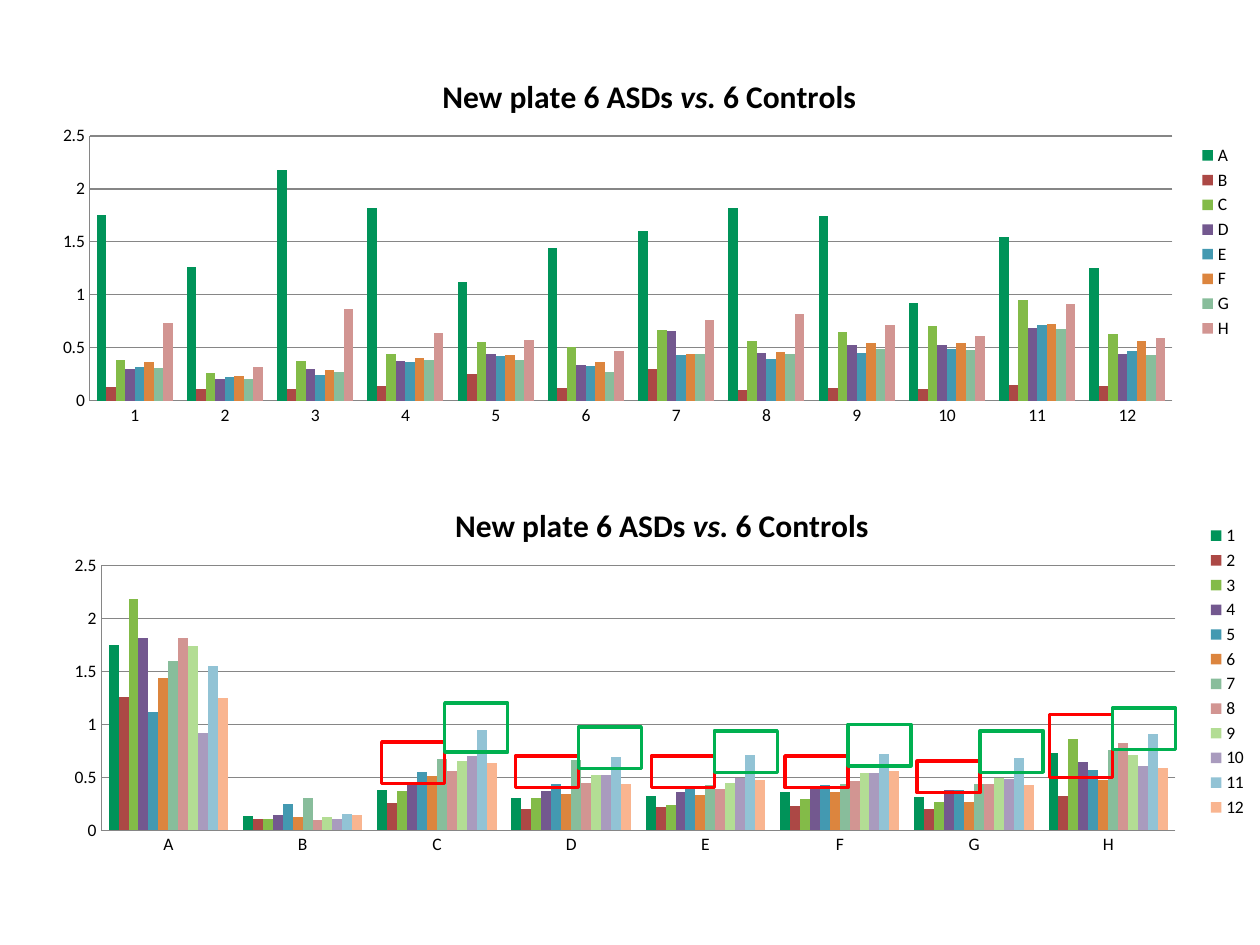
from dataclasses import dataclass

from lxml.etree import SubElement
from pptx import Presentation
from pptx.chart.data import CategoryChartData
from pptx.dml.color import RGBColor
from pptx.enum.chart import XL_CHART_TYPE as ChartType
from pptx.enum.chart import XL_LEGEND_POSITION as LegendPosition
from pptx.enum.chart import XL_TICK_MARK as TickMark
from pptx.enum.shapes import MSO_SHAPE as Preset
from pptx.oxml.ns import qn
from pptx.util import Inches, Pt

TITLE = [("New plate 6 ASDs ", False), ("vs.", True), (" 6 Controls", False)]
SAMPLES = [str(number) for number in range(1, 13)]
PLATE = {  # plate row: one value per sample
    "A": (1.75, 1.26, 2.18, 1.82, 1.12, 1.44, 1.6, 1.82, 1.74, 0.92, 1.55, 1.25),
    "B": (0.13, 0.11, 0.11, 0.14, 0.25, 0.12, 0.3, 0.1, 0.12, 0.11, 0.15, 0.14),
    "C": (0.38, 0.26, 0.37, 0.44, 0.55, 0.51, 0.67, 0.56, 0.65, 0.7, 0.95, 0.63),
    "D": (0.3, 0.2, 0.3, 0.37, 0.44, 0.34, 0.66, 0.45, 0.52, 0.52, 0.69, 0.44),
    "E": (0.32, 0.22, 0.24, 0.36, 0.42, 0.33, 0.43, 0.39, 0.45, 0.49, 0.71, 0.47),
    "F": (0.36, 0.23, 0.29, 0.4, 0.43, 0.36, 0.44, 0.46, 0.54, 0.54, 0.72, 0.56),
    "G": (0.31, 0.2, 0.27, 0.38, 0.38, 0.27, 0.44, 0.44, 0.49, 0.48, 0.68, 0.43),
    "H": (0.73, 0.32, 0.86, 0.64, 0.57, 0.47, 0.76, 0.82, 0.71, 0.61, 0.91, 0.59),
}
BY_SAMPLE = dict(zip(SAMPLES, zip(*PLATE.values())))

# categories, series, frame in inches, plot area as shares of the frame
CHARTS = [
    (SAMPLES, PLATE, (0.33, 0.42, 9.55, 3), (0.04, 0.22, 0.9, 0.7)),
    (list(PLATE), BY_SAMPLE, (0.42, 3.83, 9.58, 3), (0.04, 0.22, 0.89, 0.7)),
]
TITLE_CORNER = (0.33, 0.05)

# for plate rows C to H: lefts, then (top, height) of each box
MARK_WIDTH = 0.5
MARK_LEFTS = [3.03, 4.09, 5.17, 6.23, 7.28, 8.33]
ASD_MARKS = [(5.89, 0.33), (6, 0.25), (6, 0.25), (6, 0.25), (6.04, 0.25), (5.67, 0.5)]
CONTROL_MARKS = [(5.58, 0.39), (5.77, 0.33), (5.8, 0.33),
                 (5.75, 0.33), (5.8, 0.33), (5.62, 0.33)]


@dataclass(frozen=True)
class Theme:
    font: str = "Calibri"
    text: str = "000000"
    grid: str = "868686"
    asd: str = "FF0000"
    control: str = "00B050"
    series: tuple = ("009359", "AC4845", "83BB48", "73588F", "4399B1", "DC853E",
                     "88BD9B", "D29592", "B3DD94", "A99BBE", "92C3D5", "F9B590")
    title_size: int = 18
    label_size: int = 10
    grid_width: float = 0.75
    mark_width: float = 2


THEME = Theme()


def color(value):
    return RGBColor.from_string(value)


def style_font(font, size, **options):
    formats = {"name": THEME.font, "size": Pt(size), **options}
    for name, value in formats.items():
        setattr(font, name, value)
    font.color.rgb = color(THEME.text)


def style_line(line, value, width):
    line.color.rgb = color(value)
    line.width = Pt(width)


def place(element, shares, inner=False):
    """Fix a chart part at shares (x, y, w, h) of the chart frame."""
    layout = element.find(qn("c:layout"))
    if layout is None:
        layout = SubElement(element, qn("c:layout"))
        anchor = element.find(qn("c:tx"))
        if anchor is None:
            element.insert(0, layout)
        else:
            anchor.addnext(layout)
    for child in list(layout):
        layout.remove(child)
    manual = SubElement(layout, qn("c:manualLayout"))
    settings = [("layoutTarget", "inner")] if inner else []
    settings += [("xMode", "edge"), ("yMode", "edge"), *zip("xywh", shares)]
    for tag, value in settings:
        SubElement(manual, qn(f"c:{tag}")).set("val", str(value))


def add_title(chart):
    chart.has_title = True
    para = chart.chart_title.text_frame.paragraphs[0]
    for text, italic in TITLE:
        span = para.add_run()
        span.text = text
        style_font(span.font, THEME.title_size, bold=True, italic=italic)
    chart.chart_title.include_in_layout = False
    place(chart.chart_title._element, TITLE_CORNER)


def add_column_chart(page, categories, series, frame, plot_shares):
    data = CategoryChartData()
    data.categories = categories
    for name, values in series.items():
        data.add_series(name, values)
    chart = page.shapes.add_chart(
        ChartType.COLUMN_CLUSTERED, *map(Inches, frame), data).chart
    style_font(chart.font, THEME.label_size)
    add_title(chart)

    chart.has_legend = True
    chart.legend.position = LegendPosition.RIGHT
    chart.legend.include_in_layout = False

    plot = chart.plots[0]
    for name, value in {"gap_width": 150, "overlap": 0, "vary_by_categories": False}.items():
        setattr(plot, name, value)
    for bars, fill in zip(plot.series, THEME.series):
        bars.format.fill.solid()
        bars.format.fill.fore_color.rgb = color(fill)

    for axis in (chart.category_axis, chart.value_axis):
        axis.major_tick_mark = axis.minor_tick_mark = TickMark.NONE
        style_line(axis.format.line, THEME.grid, THEME.grid_width)
    scale = {"minimum_scale": 0, "maximum_scale": 2.5, "major_unit": 0.5,
             "has_major_gridlines": True}
    for name, value in scale.items():
        setattr(chart.value_axis, name, value)
    style_line(chart.value_axis.major_gridlines.format.line, THEME.grid, THEME.grid_width)
    place(chart._chartSpace.chart.plotArea, plot_shares, inner=True)


def add_marks(page, marks, offset, line_color):
    for left, (top, height) in zip(MARK_LEFTS, marks):
        box = page.shapes.add_shape(
            Preset.RECTANGLE, *map(Inches, (left + offset, top, MARK_WIDTH, height)))
        box.shadow.inherit = False
        box.fill.background()
        style_line(box.line, line_color, THEME.mark_width)


def main():
    deck = Presentation()
    deck.slide_width, deck.slide_height = Inches(10), Inches(7.5)
    page = deck.slides.add_slide(deck.slide_layouts[6])
    for chart in CHARTS:
        add_column_chart(page, *chart)
    add_marks(page, ASD_MARKS, 0, THEME.asd)
    add_marks(page, CONTROL_MARKS, MARK_WIDTH, THEME.control)
    deck.save("out.pptx")


if __name__ == "__main__":
    main()
